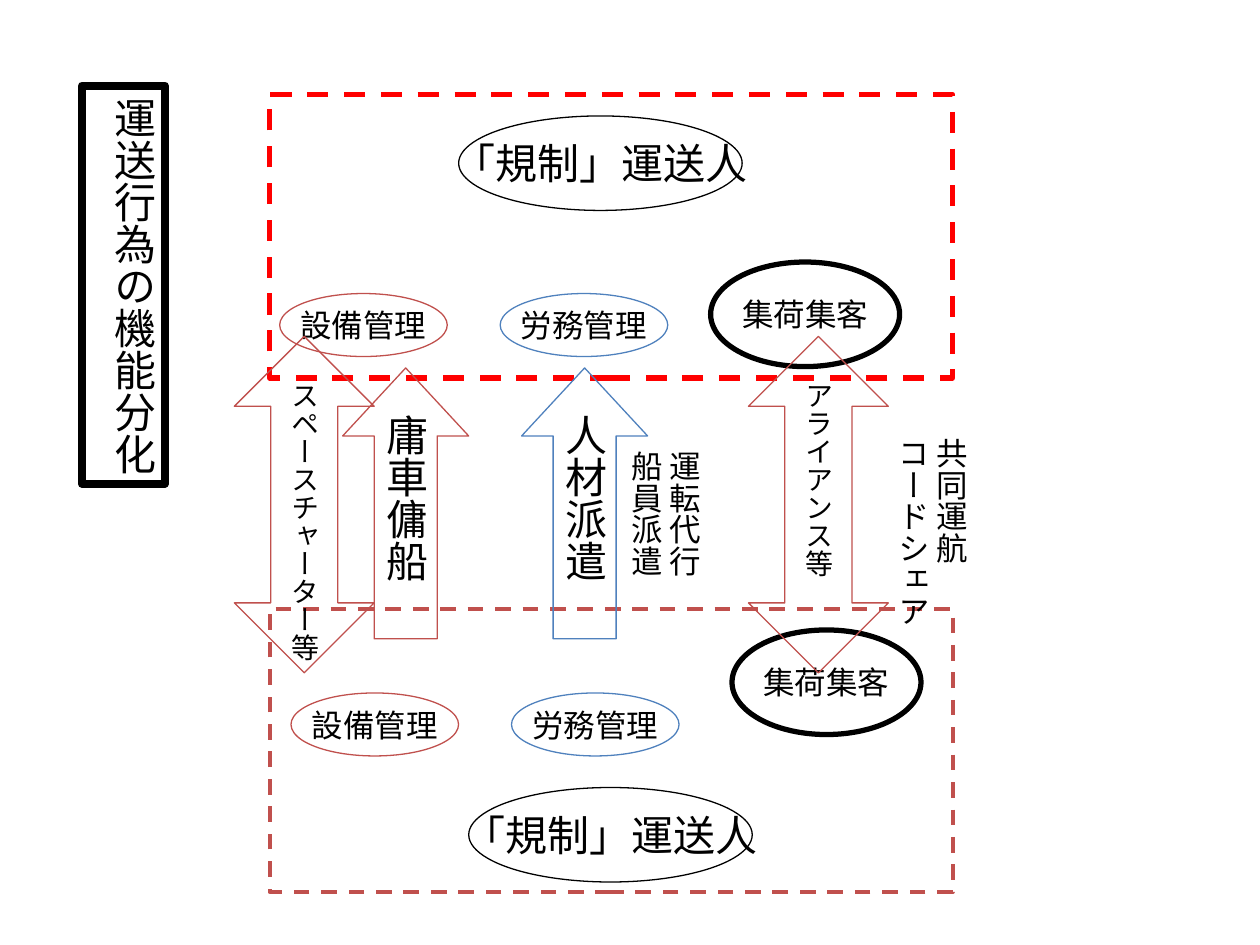
import pptx
import pptx.util
import pptx.dml.color
import pptx.enum.dml
import pptx.enum.shapes
import pptx.enum.text

Inches = pptx.util.Inches
RGBColor = pptx.dml.color.RGBColor
Shape = pptx.enum.shapes.MSO_SHAPE
Anchor = pptx.enum.text.MSO_ANCHOR
Align = pptx.enum.text.PP_ALIGN

BLACK = RGBColor(0x00, 0x00, 0x00)
RED = RGBColor(0xFF, 0x00, 0x00)
BRICK = RGBColor(0xC0, 0x50, 0x4D)
BLUE = RGBColor(0x4F, 0x81, 0xBD)
FONT = "Times New Roman"


def write_text(shape, lines, size, anchor, align, vertical):
    frame = shape.text_frame
    frame.word_wrap = False
    frame.vertical_anchor = anchor
    if vertical:
        frame._txBody.bodyPr.set("vert", "eaVert")
    frame.text = "\n".join(lines)
    for paragraph in frame.paragraphs:
        paragraph.alignment = align
        paragraph.font.size = pptx.util.Pt(size)
        paragraph.font.name = FONT
        paragraph.font.color.rgb = BLACK


def add_outline(kind, box, color, weight, text="", size=18,
                vertical=False, anchor=Anchor.MIDDLE):
    shape = slide.shapes.add_shape(kind, *[Inches(value) for value in box])
    shape.shadow.inherit = False
    shape.fill.background()
    shape.line.color.rgb = color
    shape.line.width = pptx.util.Pt(weight)
    if text:
        write_text(shape, [text], size, anchor, Align.CENTER, vertical)
    return shape


presentation = pptx.Presentation()
presentation.slide_width = Inches(10)
presentation.slide_height = Inches(7.5)
slide = presentation.slides.add_slide(presentation.slide_layouts[6])

# Two carriers: frame top, frame colour and weight, carrier ellipse,
# then positions of the sales, labour and equipment ellipses
carriers = [
    (0.75, RED, 3, (3.64, 0.92), (5.64, 2.08), (3.97, 2.33), (2.22, 2.33)),
    (4.83, BRICK, 2.25, (3.72, 6.25), (5.81, 5), (4.06, 5.5), (2.31, 5.5)),
]
for frame_top, frame_color, frame_weight, carrier, sales, labour, equipment in carriers:
    for position, extent, color, weight, text, size in [
        (carrier, (2.25, 0.75), BLACK, 0.75, "「規制」運送人", 24),
        (sales, (1.5, 0.83), BLACK, 3, "集荷集客", 18),
        (labour, (1.33, 0.5), BLUE, 0.75, "労務管理", 18),
        (equipment, (1.33, 0.5), BRICK, 0.75, "設備管理", 18),
    ]:
        add_outline(Shape.OVAL, position + extent, color, weight, text, size)
    frame = add_outline(Shape.RECTANGLE, (2.14, frame_top, 5.42, 2.25),
                        frame_color, frame_weight)
    frame.line.dash_style = pptx.enum.dml.MSO_LINE.DASH

# Vertical title
title = add_outline(Shape.RECTANGLE, (0.65, 0.68, 0.66, 3.16), BLACK, 4.5,
                    "運送行為の機能分化", 24, True, Anchor.TOP)
title.text_frame.auto_size = pptx.enum.text.MSO_AUTO_SIZE.SHAPE_TO_FIT_TEXT

# Arrows between the carriers
for kind, box, head, color, text, size in [
    (Shape.UP_ARROW, (2.72, 2.92, 1, 2.15), 0.54, BRICK, "庸車傭船", 24),
    (Shape.UP_ARROW, (4.14, 2.92, 1, 2.15), 0.54, BLUE, "人材派遣", 24),
    (Shape.UP_DOWN_ARROW, (1.86, 2.67, 1.11, 2.67), 0.48, BRICK, "スペースチャーター等", 16),
    (Shape.UP_DOWN_ARROW, (5.94, 2.67, 1.11, 2.67), 0.48, BRICK, "アライアンス等", 16),
]:
    arrow = add_outline(kind, box, color, 0.75, text, size, True)
    arrow.adjustments[0] = 0.5
    arrow.adjustments[1] = head

# Notes beside the arrows
for box, lines in [
    ((6.95, 3.38, 0.8, 1.37), ["共同運航", "コードシェア"]),
    ((4.83, 3.48, 0.8, 1.1), ["運転代行", "船員派遣"]),
]:
    note = slide.shapes.add_textbox(*[Inches(value) for value in box])
    write_text(note, lines, 18, Anchor.TOP, Align.LEFT, True)
    note.text_frame.auto_size = pptx.enum.text.MSO_AUTO_SIZE.SHAPE_TO_FIT_TEXT

presentation.save("out.pptx")
